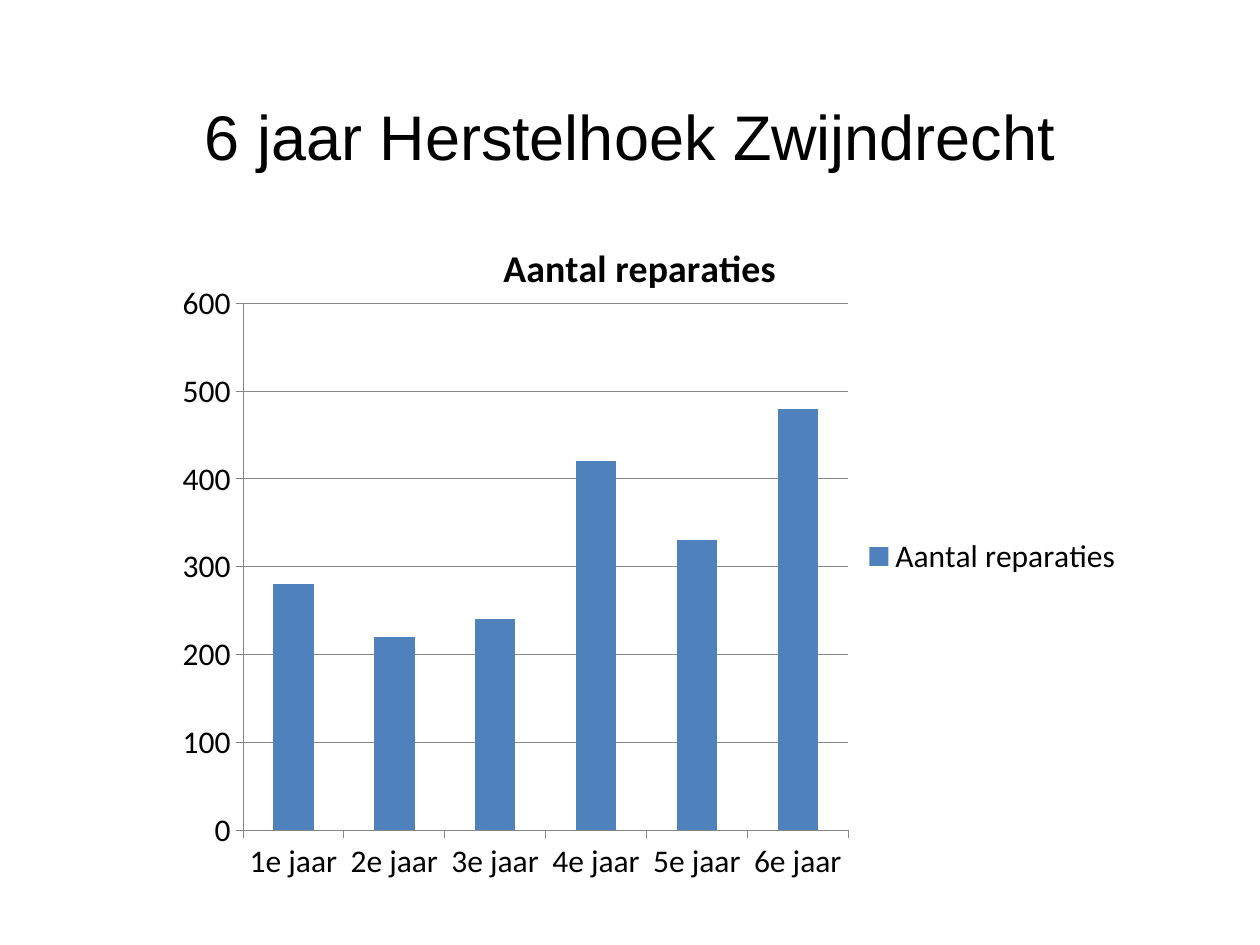
from dataclasses import dataclass

from lxml.etree import SubElement
from pptx import Presentation
from pptx.chart.data import CategoryChartData
from pptx.dml.color import RGBColor
from pptx.enum.chart import XL_CHART_TYPE as ChartType
from pptx.enum.chart import XL_LEGEND_POSITION as LegendPos
from pptx.enum.chart import XL_TICK_MARK as Tick
from pptx.enum.text import MSO_ANCHOR as Anchor
from pptx.enum.text import PP_ALIGN as Align
from pptx.oxml.ns import qn
from pptx.util import Cm, Pt


@dataclass(frozen=True)
class Theme:
    heading_font: str = "Arial"
    chart_font: str = "Calibri"
    text: RGBColor = RGBColor(0, 0, 0)
    bar: RGBColor = RGBColor(0x4F, 0x81, 0xBD)
    grid: RGBColor = RGBColor(0x86, 0x86, 0x86)
    heading_size: float = 36
    chart_title_size: float = 21.6
    label_size: float = 18
    line_width: float = 0.5


class SlideBuilder:
    """Adds styled elements to the current slide."""

    def __init__(self, slide, theme):
        self.s = slide
        self.theme = theme

    def style_font(self, font, name, size, bold=False):
        font.name = name
        font.size = Pt(size)
        font.bold = bold
        font.color.rgb = self.theme.text

    def style_line(self, line):
        line.color.rgb = self.theme.grid
        line.width = Pt(self.theme.line_width)

    def title(self, text, box):
        sp = self.s.shapes.title
        sp.left, sp.top, sp.width, sp.height = map(Cm, box)
        tf = sp.text_frame
        tf.text = text
        tf.word_wrap = True
        tf.vertical_anchor = Anchor.MIDDLE
        p = tf.paragraphs[0]
        p.alignment = Align.CENTER
        self.style_font(p.font, self.theme.heading_font, self.theme.heading_size)

    def column_chart(self, name, values, box, plot_box):
        data = CategoryChartData()
        data.categories = list(values)
        data.add_series(name, values.values())
        chart = self.s.shapes.add_chart(
            ChartType.COLUMN_CLUSTERED, *map(Cm, box), data
        ).chart
        self.style_font(chart.font, self.theme.chart_font, self.theme.label_size)

        chart.has_title = True
        tf = chart.chart_title.text_frame
        tf.text = name
        self.style_font(tf.paragraphs[0].font, self.theme.chart_font,
                        self.theme.chart_title_size, bold=True)
        chart.chart_title.include_in_layout = False

        chart.has_legend = True
        chart.legend.position = LegendPos.RIGHT
        chart.legend.include_in_layout = False

        plot = chart.plots[0]
        plot.gap_width = 150
        plot.vary_by_categories = False
        fill = plot.series[0].format.fill
        fill.solid()
        fill.fore_color.rgb = self.theme.bar

        for axis in (chart.category_axis, chart.value_axis):
            axis.major_tick_mark = Tick.OUTSIDE
            axis.minor_tick_mark = Tick.NONE
            self.style_line(axis.format.line)
        axis = chart.value_axis
        axis.minimum_scale, axis.maximum_scale, axis.major_unit = 0, 600, 100
        axis.has_major_gridlines = True
        self.style_line(axis.major_gridlines.format.line)
        self.place_plot(chart, plot_box)

    def place_plot(self, chart, plot_box):
        area = chart.element.find(".//" + qn("c:plotArea"))
        for old in area.findall(qn("c:layout")):
            area.remove(old)
        layout = SubElement(area, qn("c:layout"))
        area.insert(0, layout)
        manual = SubElement(layout, qn("c:manualLayout"))
        settings = [("layoutTarget", "inner"), ("xMode", "edge"), ("yMode", "edge")]
        settings += zip("xywh", plot_box)
        for tag, value in settings:
            SubElement(manual, qn(f"c:{tag}")).set("val", str(value))


def main():
    prs = Presentation()
    prs.slide_width, prs.slide_height = Cm(25.4), Cm(19.05)
    title_only = prs.slide_layouts[5]
    builder = SlideBuilder(prs.slides.add_slide(title_only), Theme())
    builder.title("6 jaar Herstelhoek Zwijndrecht", (1.9, 0.93, 21.6, 3.61))
    repairs = [280, 220, 240, 420, 330, 480]
    builder.column_chart(
        "Aantal reparaties",
        {f"{year}e jaar": count for year, count in enumerate(repairs, 1)},
        box=(2.9, 4.32, 20, 13.8),
        plot_box=(0.1, 0.13, 0.61, 0.77),
    )
    prs.save("out.pptx")


if __name__ == "__main__":
    main()
